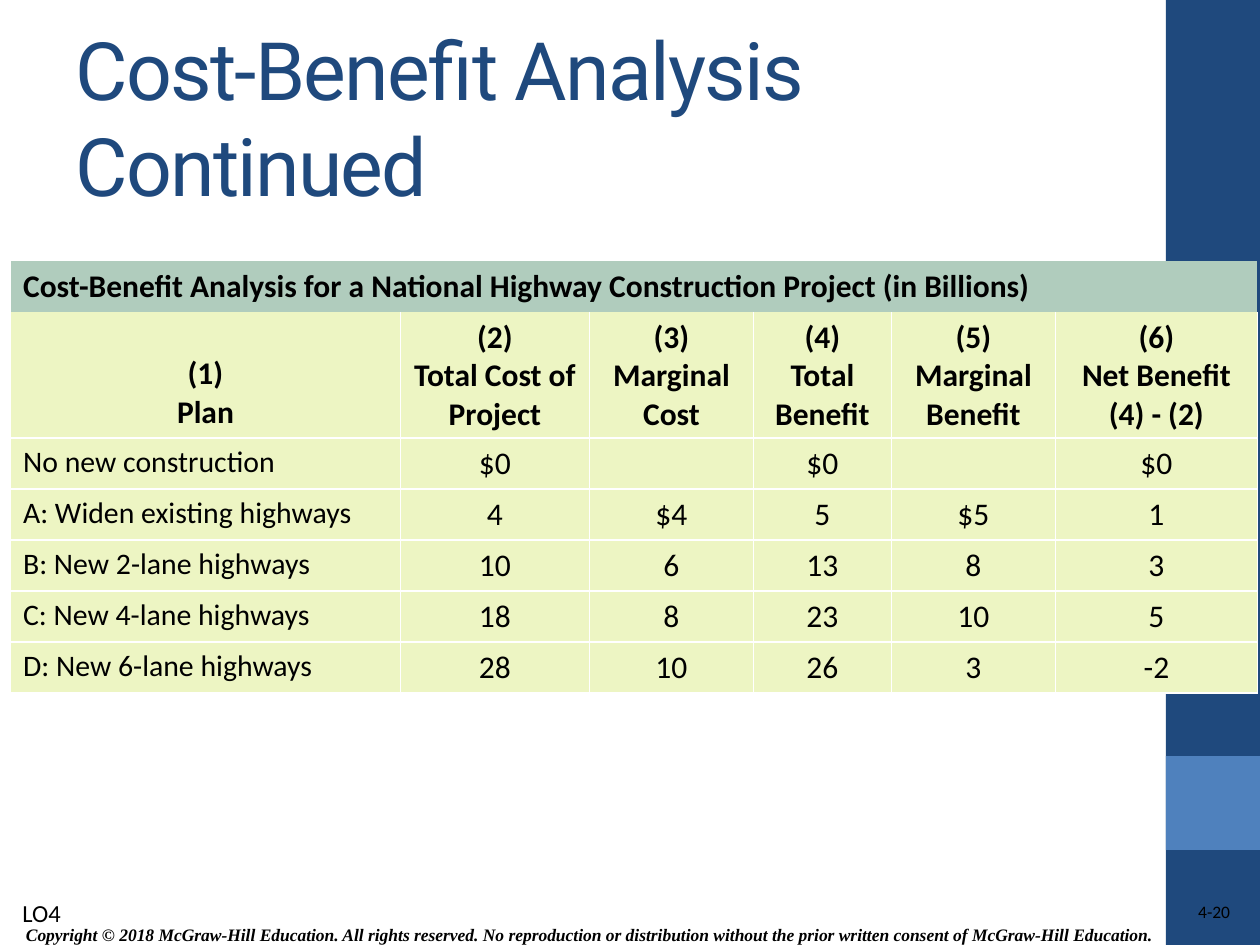
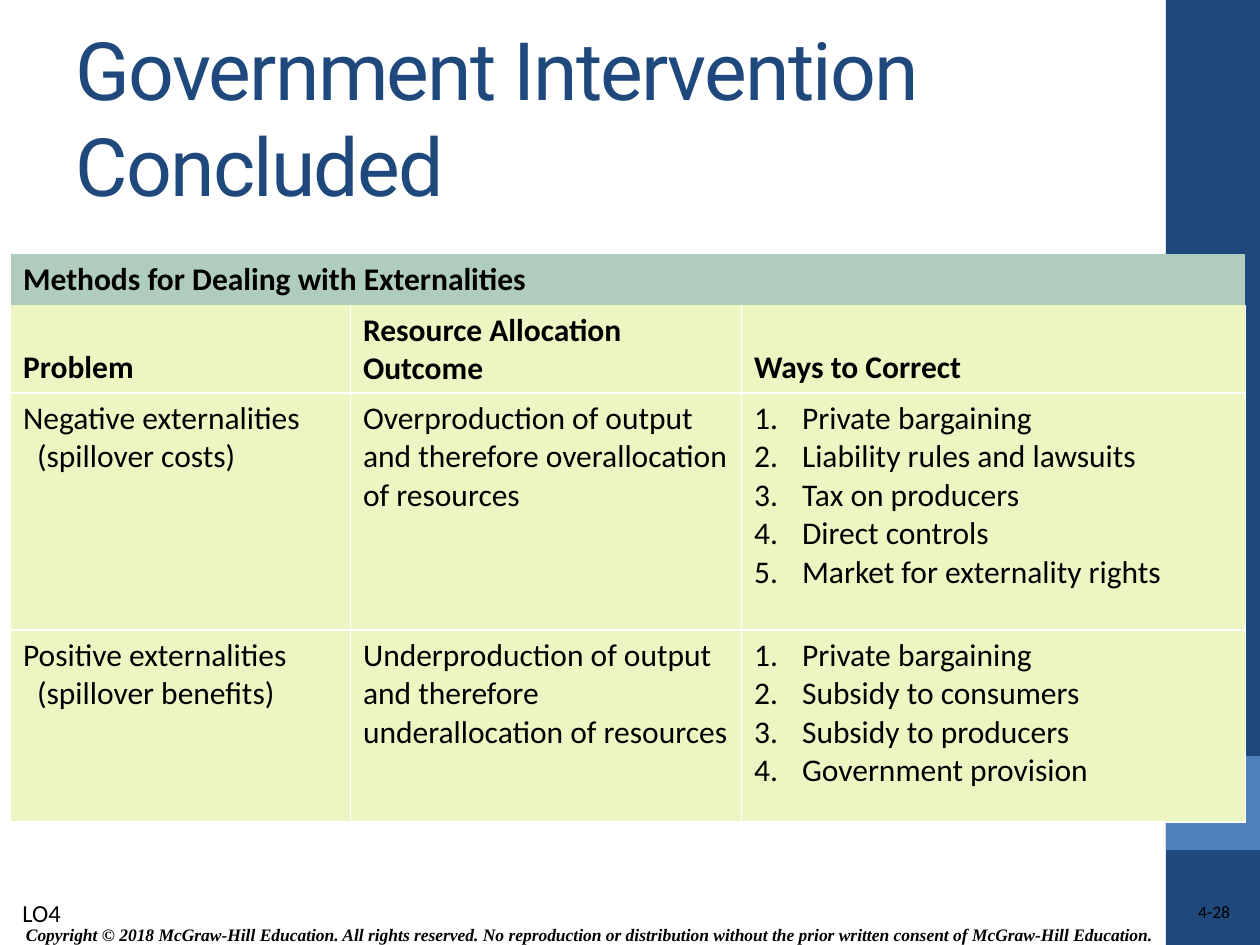
"""Build two economics slides, each with a titled table and a shared frame."""
from lxml.etree import SubElement
from pptx import Presentation
from pptx.dml.color import RGBColor
from pptx.enum.shapes import MSO_SHAPE as Shape
from pptx.enum.text import MSO_ANCHOR as Anchor, MSO_AUTO_SIZE as AutoSize, PP_ALIGN as Align
from pptx.oxml.ns import qn
from pptx.util import Emu, Pt

NAVY = RGBColor(0x1F, 0x49, 0x7D)
BLUE = RGBColor(0x4F, 0x81, 0xBD)
SAGE = RGBColor(0xB0, 0xCC, 0xBD)
LIME = RGBColor(0xED, 0xF5, 0xC3)
BLACK = RGBColor(0, 0, 0)
WHITE = RGBColor(0xFF, 0xFF, 0xFF)

COPYRIGHT = ("Copyright © 2018 McGraw-Hill Education. All rights reserved. No reproduction or "
             "distribution without the prior written consent of McGraw-Hill Education.")
OBJECTIVE = "LO4"
BANDS = [((1166, 0, 94, 945), NAVY), ((1166, 756, 94, 94), BLUE)]
LIST_INDENT = 48
SPILLOVER_INDENT = 14

SLIDES = [
    {
        "title": "Cost-Benefit Analysis Continued",
        "number": "4-20",
        "top": 261,
        "columns": [390, 189, 164, 138, 164, 202],
        "rows": [51, 126, 51, 51, 51, 51, 51],
        "centred": True,
        "label_size": 17,
        "caption": "Cost-Benefit Analysis for a National Highway Construction Project (in Billions)",
        "cells": [
            ("(1)\nPlan", "(2)\nTotal Cost of Project", "(3)\nMarginal Cost",
             "(4)\nTotal Benefit", "(5)\nMarginal Benefit", "(6)\nNet Benefit\n(4) - (2)"),
            ("No new construction", "$0", "", "$0", "", "$0"),
            ("A: Widen existing highways", "4", "$4", "5", "$5", "1"),
            ("B: New 2-lane highways", "10", "6", "13", "8", "3"),
            ("C: New 4-lane highways", "18", "8", "23", "10", "5"),
            ("D: New 6-lane highways", "28", "10", "26", "3", "-2"),
        ],
    },
    {
        "title": "Government Intervention Concluded",
        "number": "4-28",
        "top": 254,
        "columns": [340, 391, 504],
        "rows": [51, 88, 237, 192],
        "centred": False,
        "label_size": 18,
        "caption": "Methods for Dealing with Externalities",
        "cells": [
            ("Problem", "Resource Allocation Outcome", "Ways to Correct"),
            ("Negative externalities\n(spillover costs)",
             "Overproduction of output and therefore overallocation of resources",
             ["Private bargaining", "Liability rules and lawsuits", "Tax on producers",
              "Direct controls", "Market for externality rights"]),
            ("Positive externalities\n(spillover benefits)",
             "Underproduction of output and therefore underallocation of resources",
             ["Private bargaining", "Subsidy to consumers", "Subsidy to producers",
              "Government provision"]),
        ],
    },
]


def px(length):
    return Emu(round(length * 914400 / 126))


def place(shape, bounds):
    shape.left, shape.top, shape.width, shape.height = map(px, bounds)


def style(para, size, name="Calibri", color=BLACK, bold=False, italic=False, align=Align.LEFT):
    para.alignment = align
    font = para.font
    font.size, font.name, font.bold, font.italic = Pt(size), name, bold, italic
    font.color.rgb = color


def add_label(page, bounds, text, size, wrap=True, **look):
    box = page.shapes.add_textbox(*map(px, bounds))
    frame = box.text_frame
    frame.word_wrap = wrap
    frame.text = text
    style(frame.paragraphs[0], size, **look)
    return frame


def add_frame(page, title, number):
    for bounds, color in BANDS:
        band = page.shapes.add_shape(Shape.RECTANGLE, *map(px, bounds))
        band.shadow.inherit = False
        band.fill.solid()
        band.fill.fore_color.rgb = color
        band.line.fill.background()
    notice = add_label(page, (8, 917, 1162, 35), COPYRIGHT, 10, name="Times New Roman",
                       bold=True, italic=True, align=Align.CENTER)
    notice.vertical_anchor = Anchor.MIDDLE
    folio = add_label(page, (984, 901, 246, 25), number, 10, align=Align.RIGHT)
    folio.margin_left = folio.margin_right = folio.margin_top = folio.margin_bottom = 0
    folio.paragraphs[0].line_spacing = 1.02
    objective = add_label(page, (10, 892, 67, 43), OBJECTIVE, 14, wrap=False)
    objective.auto_size = AutoSize.SHAPE_TO_FIT_TEXT

    heading = page.shapes.title
    place(heading, (63, 38, 1050, 157))
    frame = heading.text_frame
    frame.text = title
    frame.auto_size = AutoSize.NONE
    frame.vertical_anchor = Anchor.MIDDLE
    para = frame.paragraphs[0]
    style(para, 46, name="Roboto", color=NAVY)
    para.runs[0]._r.get_or_add_rPr().set("spc", "-100")


def set_borders(cell, hidden):
    properties = cell._tc.get_or_add_tcPr()
    for side in "LRTB":
        line = SubElement(properties, qn(f"a:ln{side}"), w=str(Pt(1)))
        if side in hidden:
            SubElement(line, qn("a:noFill"))
        else:
            fill = SubElement(line, qn("a:solidFill"))
            SubElement(fill, qn("a:srgbClr"), val=str(WHITE))


def indent(para, left, first=0):
    properties = para._p.get_or_add_pPr()
    properties.set("marL", str(px(left)))
    properties.set("indent", str(px(first)))
    return properties


def fill_cell(cell, content, row, size, align):
    numbered = isinstance(content, list)
    frame = cell.text_frame
    frame.text = "\n".join(content) if numbered else content
    cell.vertical_anchor = Anchor.BOTTOM if row < 2 else Anchor.TOP
    set_borders(cell, {0: "LRTB", 1: "T"}.get(row, ""))
    cell.fill.solid()
    cell.fill.fore_color.rgb = LIME if row else SAGE
    for para in frame.paragraphs:
        if numbered:
            properties = indent(para, LIST_INDENT, -LIST_INDENT)
            SubElement(properties, qn("a:buAutoNum"), type="arabicPeriod")
        elif para.text.startswith("(spillover"):
            indent(para, SPILLOVER_INDENT)
        style(para, size, bold=row < 2, align=align)


def add_grid(page, data):
    columns, rows = data["columns"], data["rows"]
    bounds = (10.5, data["top"], sum(columns), sum(rows))
    table = page.shapes.add_table(len(rows), len(columns), *map(px, bounds)).table
    table.first_row = table.horz_banding = False
    for column, width in zip(table.columns, columns):
        column.width = px(width)
    for line, height in zip(table.rows, rows):
        line.height = px(height)
    caption = (data["caption"],) + ("",) * (len(columns) - 1)
    for row, contents in enumerate([caption] + data["cells"]):
        for col, content in enumerate(contents):
            is_label = row > 1 and col == 0
            centred = data["centred"] and row > 0 and not is_label
            fill_cell(table.cell(row, col), content, row,
                      data["label_size"] if is_label else 18,
                      Align.CENTER if centred else Align.LEFT)
    table.cell(0, 0).merge(table.cell(0, len(columns) - 1))


def main():
    deck = Presentation()
    deck.slide_width, deck.slide_height = px(1260), px(945)
    for data in SLIDES:
        page = deck.slides.add_slide(deck.slide_layouts[5])
        add_frame(page, data["title"], data["number"])
        add_grid(page, data)
    deck.save("out.pptx")


if __name__ == "__main__":
    main()
